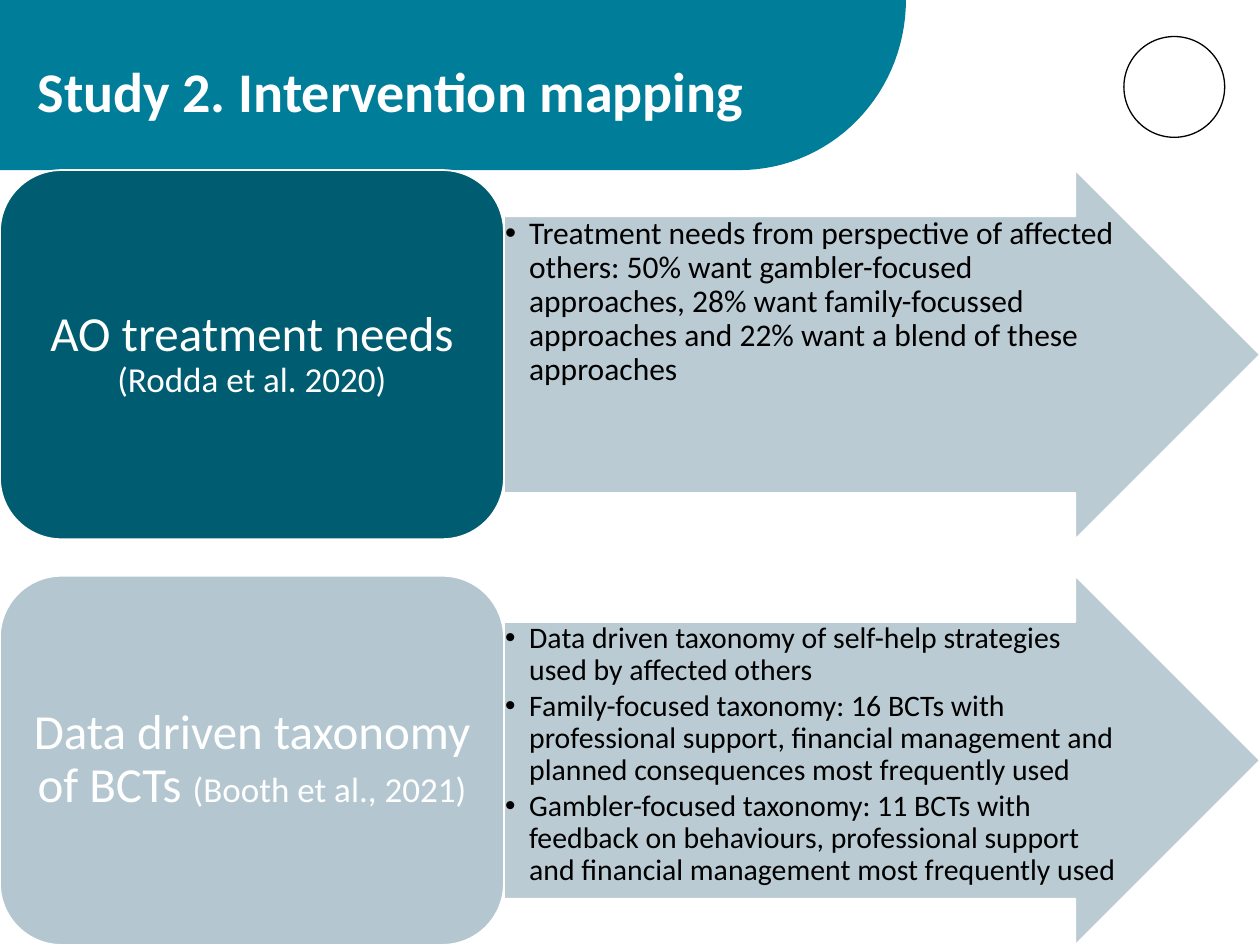
import math

import lxml.etree
import pptx
import pptx.dml.color
import pptx.enum.shapes
import pptx.enum.text
import pptx.oxml.ns
import pptx.util

Inches = pptx.util.Inches
Pt = pptx.util.Pt
MSO_SHAPE = pptx.enum.shapes.MSO_SHAPE
PP_ALIGN = pptx.enum.text.PP_ALIGN
MSO_ANCHOR = pptx.enum.text.MSO_ANCHOR
qn = pptx.oxml.ns.qn

WHITE, BLACK = "FFFFFF", "000000"
BANNER, ARROW = "007D98", "B4C6CF"
SPLIT = 4
ROW_HEIGHT = 2.93
ROW_STEP = 3.22
FIRST_ROW = 1.35

ROWS = [
    ("005C70", [("AO treatment needs ", 28), ("(Rodda et al. 2020)", 20)], 18, [
        "Treatment needs from perspective of affected others: 50% want "
        "gambler-focused approaches, 28% want family-focussed approaches "
        "and 22% want a blend of these approaches",
    ]),
    ("B4C7D0", [("Data driven taxonomy of BCTs ", 28), ("(Booth et al., 2021)", 20)], 17, [
        "Data driven taxonomy of self-help strategies used by affected others",
        "Family-focused taxonomy: 16 BCTs with professional support, financial "
        "management and planned consequences most frequently used",
        "Gambler-focused taxonomy: 11 BCTs with feedback on behaviours, "
        "professional support and financial management most frequently used",
    ]),
]


def rgb(value):
    return pptx.dml.color.RGBColor.from_string(value)


def set_fill(sp, color, alpha=None):
    """Fill a shape; alpha is opacity in percent."""
    sp.fill.solid()
    sp.fill.fore_color.rgb = rgb(color)
    if alpha is not None:
        clr = sp.fill._xPr.find(qn("a:solidFill"))[0]
        lxml.etree.SubElement(clr, qn("a:alpha"), val=str(alpha * 1000))


def add_preset(s, kind, x, y, w, h, fill=None, line=WHITE, line_width=1, alpha=None):
    sp = s.shapes.add_shape(kind, Inches(x), Inches(y), Inches(w), Inches(h))
    sp.shadow.inherit = False
    if fill:
        set_fill(sp, fill, alpha)
    else:
        sp.fill.background()
    sp.line.color.rgb = rgb(line)
    sp.line.width = Pt(line_width)
    return sp


def add_banner(s, width, height, radius):
    """Draw the title band with its rounded lower right corner."""
    corner = width - radius
    angles = [math.radians(3 * i) for i in range(31)]
    curve = [(Inches(corner + radius * math.cos(a)), Inches(height * math.sin(a)))
             for a in angles]
    builder = s.shapes.build_freeform(0, 0)
    builder.add_line_segments(curve + [(0, Inches(height))], close=True)
    sp = builder.convert_to_shape()
    sp.shadow.inherit = False
    set_fill(sp, BANNER)
    sp.line.fill.background()


def add_text_frame(s, x, y, w, h, margin_x, margin_y, anchor=MSO_ANCHOR.TOP):
    tf = s.shapes.add_textbox(Inches(x), Inches(y), Inches(w), Inches(h)).text_frame
    tf.word_wrap = True
    tf.vertical_anchor = anchor
    tf.margin_left = tf.margin_right = Inches(margin_x)
    tf.margin_top = tf.margin_bottom = Inches(margin_y)
    return tf


def add_run(p, text, size, color, bold=False):
    r = p.add_run()
    r.text = text
    r.font.name = "Calibri"
    r.font.size = Pt(size)
    r.font.bold = bold
    r.font.color.rgb = rgb(color)


def add_bullet(p):
    pPr = p._p.get_or_add_pPr()
    indent = Inches(0.19)
    pPr.set("marL", str(indent))
    pPr.set("indent", str(-indent))
    lxml.etree.SubElement(pPr, qn("a:buFont"), typeface="Arial")
    lxml.etree.SubElement(pPr, qn("a:buChar"), char="•")


def add_title(s, text):
    tf = add_text_frame(s, 0.2, 0.46, 6.99, 0.89, 0.1, 0.05)
    p = tf.paragraphs[0]
    p.line_spacing = 0.9
    add_run(p, text, 32, WHITE, bold=True)


def add_detail_arrow(s, y, size, items):
    sp = add_preset(s, MSO_SHAPE.RIGHT_ARROW, SPLIT, y, 6, ROW_HEIGHT, ARROW, alpha=90)
    sp.adjustments[0] = 0.75
    sp.adjustments[1] = 0.5
    tf = add_text_frame(s, SPLIT, y + ROW_HEIGHT / 8, 4.9, ROW_HEIGHT * 0.75, 0.01, 0.01)
    for i, item in enumerate(items):
        p = tf.add_paragraph() if i else tf.paragraphs[0]
        add_bullet(p)
        p.line_spacing = 0.9
        p.space_after = Pt(2)
        add_run(p, item, size, BLACK)


def add_topic_box(s, y, fill, runs):
    add_preset(s, MSO_SHAPE.ROUNDED_RECTANGLE, 0, y, SPLIT, ROW_HEIGHT, fill)
    inset = 0.14
    tf = add_text_frame(s, inset, y + inset, SPLIT - 2 * inset, ROW_HEIGHT - 2 * inset,
                        0.12, 0.06, MSO_ANCHOR.MIDDLE)
    p = tf.paragraphs[0]
    p.alignment = PP_ALIGN.CENTER
    p.line_spacing = 0.9
    for text, size in runs:
        add_run(p, text, size, WHITE)


def main():
    prs = pptx.Presentation()
    prs.slide_width, prs.slide_height = Inches(10), Inches(7.5)
    s = prs.slides.add_slide(prs.slide_layouts[6])
    add_banner(s, 7.19, FIRST_ROW, 1.32)
    add_preset(s, MSO_SHAPE.OVAL, 8.92, 0.29, 0.8, 0.8, line=BLACK, line_width=0.75)
    add_title(s, "Study 2. Intervention mapping")
    for i, (fill, topic, size, items) in enumerate(ROWS):
        y = FIRST_ROW + i * ROW_STEP
        add_detail_arrow(s, y, size, items)
        add_topic_box(s, y, fill, topic)
    prs.save("out.pptx")


if __name__ == "__main__":
    main()
